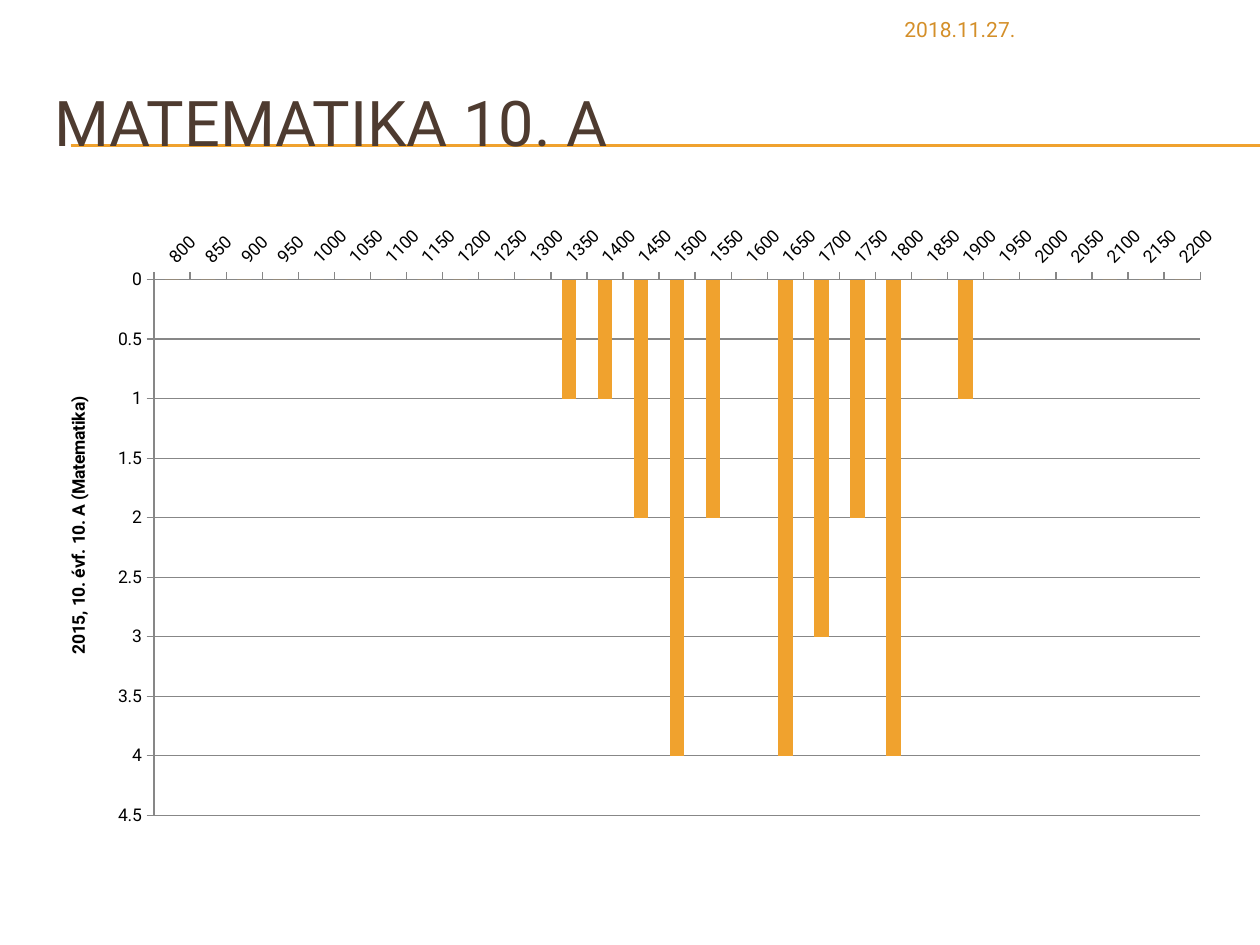
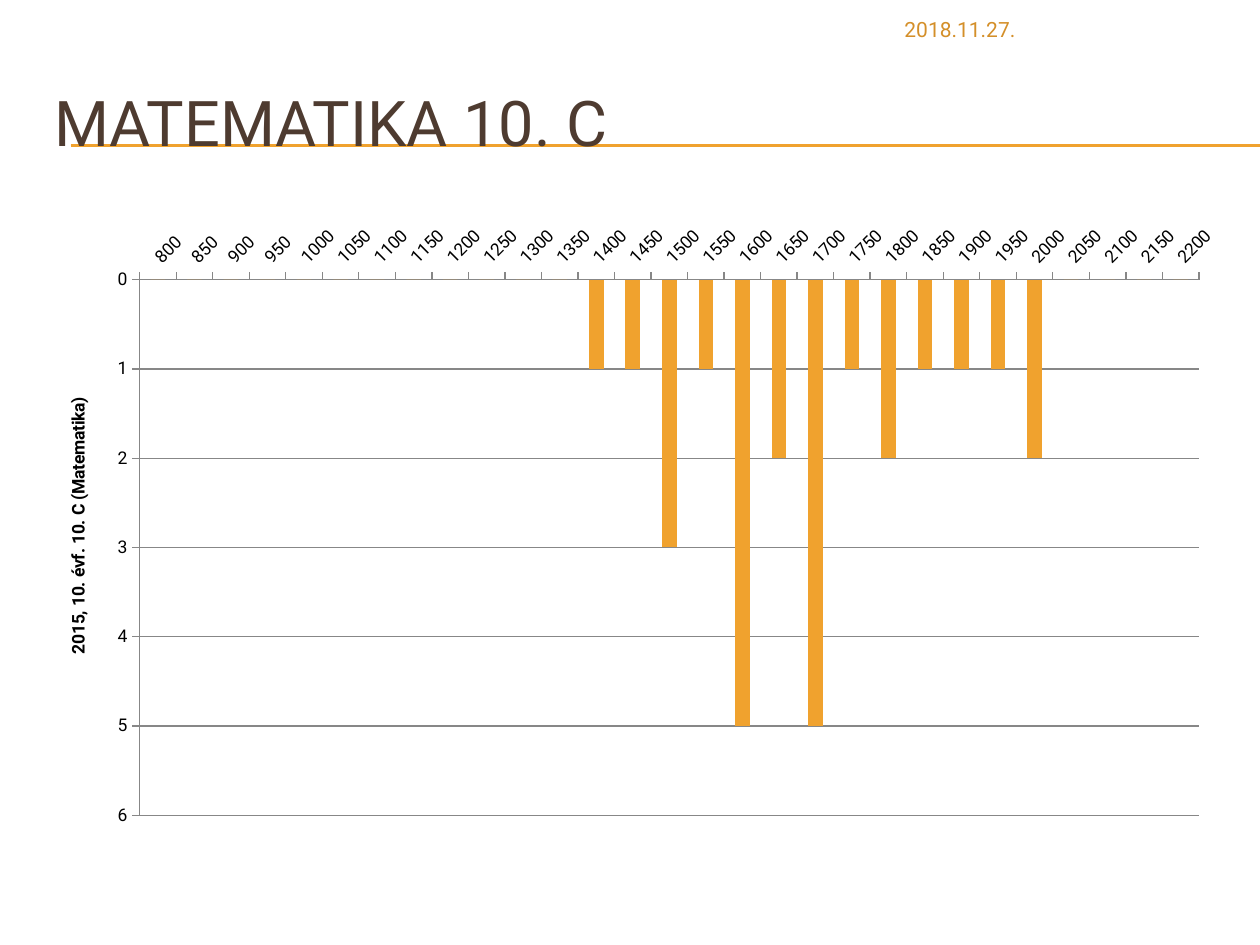
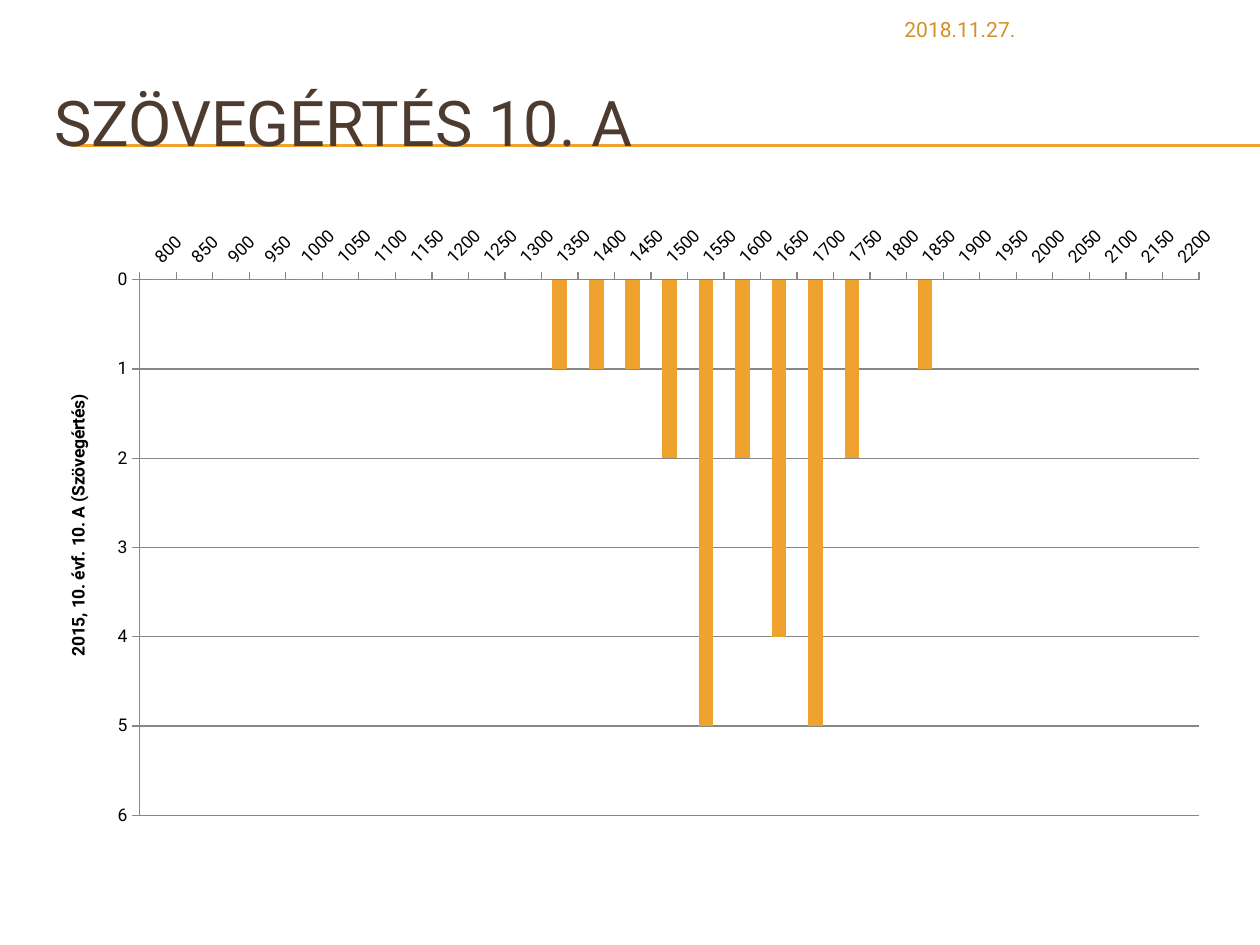
import pptx
import pptx.chart.data
import pptx.dml.color
import pptx.enum.chart
import pptx.enum.shapes
import pptx.enum.text
import pptx.oxml.ns
import pptx.oxml.xmlchemy
import pptx.util

WIDTH, HEIGHT = 10, 7.5
MARGIN = 0.33
CONTENT_WIDTH = 9.5
FONT = "Roboto"
ORANGE, DATE_COLOR, BROWN = "F0A22E", "D48F29", "4E3B30"
BLACK, GRAY = "000000", "878787"
DATE = "2018.11.27."
RULE_LEFT, RULE_TOPS = 0.56, (1.15, 1.16)
CHART_BOX = (MARGIN, 1.7, CONTENT_WIDTH, 4.95)
PLOT_TOP, PLOT_RIGHT, PLOT_BOTTOM = 2.22, 9.52, 6.47

SCORES = range(800, 2201, 50)
# Number of pupils at each score; every other score has none.
CLASSES = [
    {
        "title": "MATEMATIKA 10. A",
        "axis": "2015, 10. évf. 10. A (Matematika)",
        "pupils": {1350: 1, 1400: 1, 1450: 2, 1500: 4, 1550: 2, 1650: 4,
                   1700: 3, 1750: 2, 1800: 4, 1900: 1},
        "maximum": 4.5, "step": 0.5, "plot_left": 1.22,
    },
    {
        "title": "MATEMATIKA 10. C",
        "axis": "2015, 10. évf. 10. C (Matematika)",
        "pupils": {1400: 1, 1450: 1, 1500: 3, 1550: 1, 1600: 5, 1650: 2, 1700: 5,
                   1750: 1, 1800: 2, 1850: 1, 1900: 1, 1950: 1, 2000: 2},
        "maximum": 6, "step": 1, "plot_left": 1.11,
    },
    {
        "title": "SZÖVEGÉRTÉS 10. A",
        "axis": "2015, 10. évf. 10. A (Szövegértés)",
        "pupils": {1350: 1, 1400: 1, 1450: 1, 1500: 2, 1550: 5, 1600: 2,
                   1650: 4, 1700: 5, 1750: 2, 1850: 1},
        "maximum": 6, "step": 1, "plot_left": 1.11,
    },
]


def color(hex_string):
    return pptx.dml.color.RGBColor.from_string(hex_string)


def inches(*lengths):
    return [pptx.util.Inches(length) for length in lengths]


def new_element(tag):
    return pptx.oxml.xmlchemy.OxmlElement(tag)


def style_font(font, size, hex_string, bold=False):
    font.name = FONT
    font.size = pptx.util.Pt(size)
    font.color.rgb = color(hex_string)
    font.bold = bold


def style_line(line, hex_string):
    line.color.rgb = color(hex_string)
    line.width = pptx.util.Pt(0.75)


def write(shape, text, size, hex_string):
    frame = shape.text_frame
    frame.word_wrap = True
    frame.auto_size = pptx.enum.text.MSO_AUTO_SIZE.NONE
    paragraph = frame.paragraphs[0]
    paragraph.alignment = pptx.enum.text.PP_ALIGN.LEFT
    run = paragraph.add_run()
    run.text = text
    style_font(run.font, size, hex_string)


def add_header(slide, text):
    for top in RULE_TOPS:
        rule = slide.shapes.add_connector(
            pptx.enum.shapes.MSO_CONNECTOR.STRAIGHT,
            *inches(RULE_LEFT, top, WIDTH, top))
        style_line(rule.line, ORANGE)
        rule._element.spPr.append(new_element("a:effectLst"))

    title = slide.shapes.title
    title.left, title.top, title.width, title.height = inches(
        MARGIN, 0.5, CONTENT_WIDTH, 0.92)
    title.text_frame.vertical_anchor = pptx.enum.text.MSO_ANCHOR.MIDDLE
    write(title, text, 36, BROWN)
    slide.shapes._spTree.append(title._element)  # in front of the rules

    date = slide.shapes.add_textbox(*inches(7.08, 0.08, 2.75, 0.32))
    write(date, DATE, 12, DATE_COLOR)


def set_plot_area(chart, plot_left):
    """Fix the inner plot area, given in slide inches."""
    left, top, width, height = CHART_BOX
    shares = {
        "x": (plot_left - left) / width,
        "y": (PLOT_TOP - top) / height,
        "w": (PLOT_RIGHT - plot_left) / width,
        "h": (PLOT_BOTTOM - PLOT_TOP) / height,
    }
    settings = {"layoutTarget": "inner", "xMode": "edge", "yMode": "edge"}
    settings.update({name: f"{share:.3f}" for name, share in shares.items()})
    plot_area = chart._chartSpace.chart.plotArea
    for old_layout in plot_area.findall(pptx.oxml.ns.qn("c:layout")):
        plot_area.remove(old_layout)
    layout = new_element("c:layout")
    manual = new_element("c:manualLayout")
    for name, value in settings.items():
        setting = new_element(f"c:{name}")
        setting.set("val", value)
        manual.append(setting)
    layout.append(manual)
    plot_area.insert(0, layout)


def add_histogram(slide, school_class):
    data = pptx.chart.data.CategoryChartData()
    data.categories = [str(score) for score in SCORES]
    data.add_series("Series 1", [school_class["pupils"].get(score, 0) for score in SCORES])
    chart = slide.shapes.add_chart(
        pptx.enum.chart.XL_CHART_TYPE.COLUMN_CLUSTERED,
        *inches(*CHART_BOX), data).chart
    chart.has_legend = False
    chart.has_title = False
    style_font(chart.font, 10, BLACK)

    plot = chart.plots[0]
    plot.gap_width = 150
    plot.vary_by_categories = False
    fill = plot.series[0].format.fill
    fill.solid()
    fill.fore_color.rgb = color(ORANGE)

    score_axis, count_axis = chart.category_axis, chart.value_axis
    for axis in (score_axis, count_axis):
        axis.major_tick_mark = pptx.enum.chart.XL_TICK_MARK.OUTSIDE
        axis.minor_tick_mark = pptx.enum.chart.XL_TICK_MARK.NONE
        style_line(axis.format.line, GRAY)
        style_font(axis.tick_labels.font, 10, BLACK)
    labels = score_axis._element.find(pptx.oxml.ns.qn("c:txPr"))
    labels.find(pptx.oxml.ns.qn("a:bodyPr")).set("rot", str(-45 * 60000))

    count_axis.reverse_order = True
    count_axis.minimum_scale = 0
    count_axis.maximum_scale = school_class["maximum"]
    count_axis.major_unit = school_class["step"]
    count_axis.has_major_gridlines = True
    style_line(count_axis.major_gridlines.format.line, GRAY)
    frame = count_axis.axis_title.text_frame
    run = frame.paragraphs[0].add_run()
    run.text = school_class["axis"]
    style_font(run.font, 10, BLACK, bold=True)
    frame._txBody.bodyPr.set("rot", str(-90 * 60000))
    set_plot_area(chart, school_class["plot_left"])


def main():
    presentation = pptx.Presentation()
    presentation.slide_width, presentation.slide_height = inches(WIDTH, HEIGHT)
    title_only = presentation.slide_layouts[5]
    for school_class in CLASSES:
        slide = presentation.slides.add_slide(title_only)
        add_header(slide, school_class["title"])
        add_histogram(slide, school_class)
    presentation.save("out.pptx")


if __name__ == "__main__":
    main()
